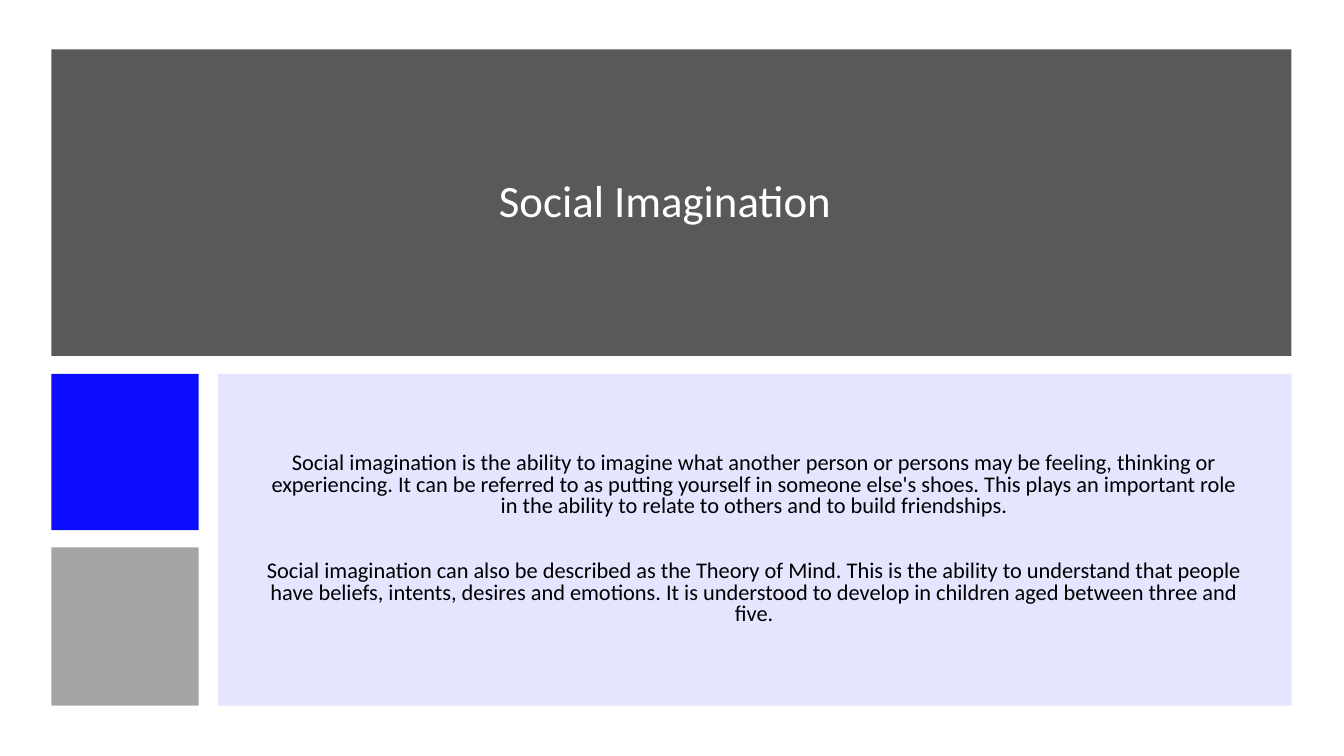
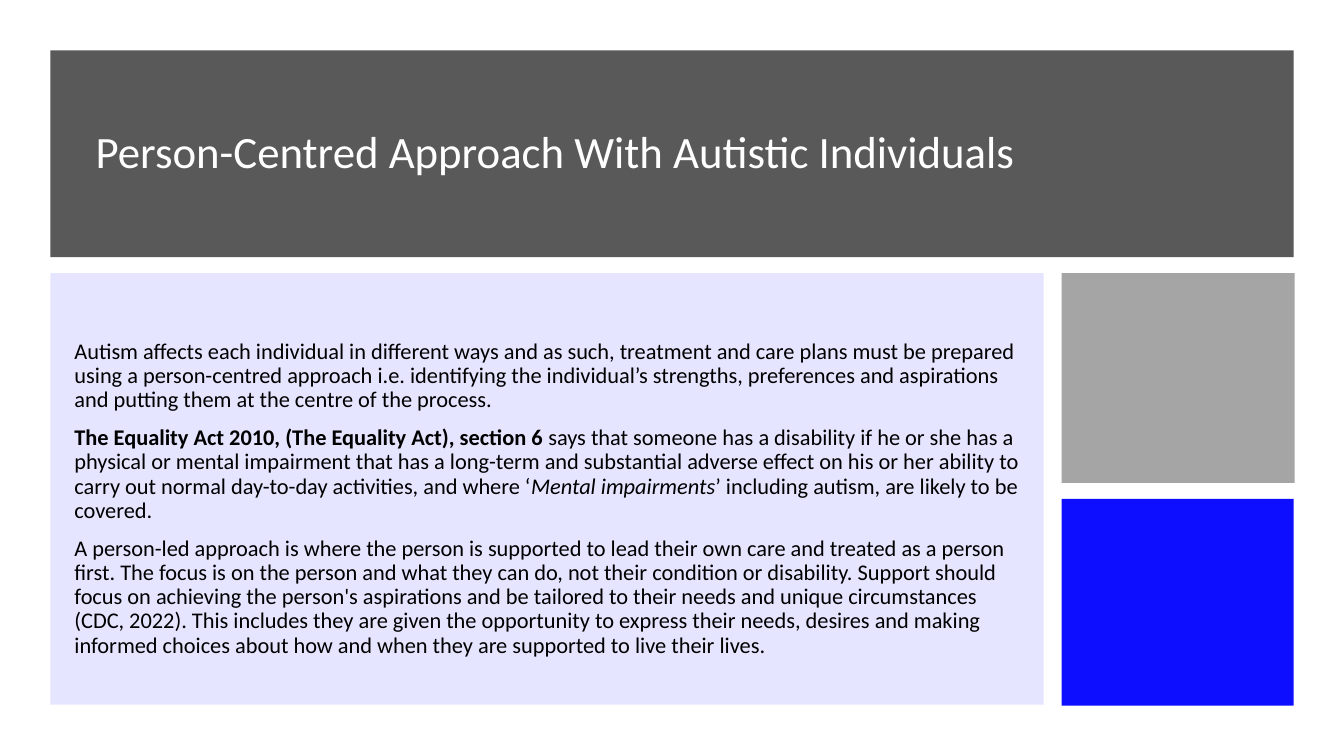
from dataclasses import dataclass

from lxml.etree import SubElement
from pptx import Presentation
from pptx.dml.color import RGBColor
from pptx.enum.shapes import MSO_SHAPE as Shape
from pptx.enum.text import MSO_ANCHOR as Anchor, PP_ALIGN as Align
from pptx.oxml.ns import qn
from pptx.util import Inches, Pt


@dataclass(frozen=True)
class Theme:
    font: str = "Calibri"
    title_size: int = 32
    body_size: int = 16
    title_text: str = "FFFFFF"
    body_text: str = "000000"
    # Fills are (colour, opacity in percent)
    band: tuple = ("595959", 100)
    panel: tuple = ("8080FF", 20)
    accent: tuple = ("0000FF", 95)
    neutral: tuple = ("A5A5A5", 100)


class Deck:
    def __init__(self, theme):
        self.theme = theme
        self.presentation = Presentation()
        self.presentation.slide_width = Inches(13.33)
        self.presentation.slide_height = Inches(7.5)
        self.slide = None

    def new_slide(self):
        blank = self.presentation.slide_layouts[6]
        self.slide = self.presentation.slides.add_slide(blank)

    def block(self, left, top, width, height, fill):
        color, opacity = fill
        block = self.slide.shapes.add_shape(
            Shape.RECTANGLE, Inches(left), Inches(top), Inches(width), Inches(height))
        block.shadow.inherit = False
        block.line.fill.background()
        block.fill.solid()
        block.fill.fore_color.rgb = RGBColor.from_string(color)
        if opacity < 100:
            color_node = block.fill._xPr.find(qn("a:solidFill"))[0]
            SubElement(color_node, qn("a:alpha"), val=str(opacity * 1000))

    def text(self, paragraphs, left, top, width, height, *, size, color,
             align=Align.LEFT, line_spacing=0.9, gaps=None):
        """Each paragraph is a list of (text, style) runs; gaps are points before each."""
        box = self.slide.shapes.add_textbox(
            Inches(left), Inches(top), Inches(width), Inches(height))
        frame = box.text_frame
        frame.word_wrap = True
        frame.vertical_anchor = Anchor.MIDDLE
        for index, runs in enumerate(paragraphs):
            paragraph = frame.add_paragraph() if index else frame.paragraphs[0]
            paragraph.alignment = align
            paragraph.line_spacing = line_spacing
            paragraph.space_before = Pt(gaps[index] if gaps else 0)
            for words, style in runs:
                run = paragraph.add_run()
                run.text = words
                run.font.name = self.theme.font
                run.font.size = Pt(size)
                run.font.color.rgb = RGBColor.from_string(color)
                run.font.bold = style == "bold"
                run.font.italic = style == "italic"

    def title(self, words, *place):
        self.text([[(words, "")]], *place,
                  size=self.theme.title_size, color=self.theme.title_text)

    def body(self, paragraphs, *place, **layout):
        self.text(paragraphs, *place, size=self.theme.body_size,
                  color=self.theme.body_text, **layout)


def social_imagination(deck):
    theme = deck.theme
    deck.new_slide()
    deck.block(0.51, 0.49, 12.3, 3.04, theme.band)
    deck.title("Social Imagination", 4.85, 1.59, 3.61, 0.85)
    deck.block(0.51, 3.71, 1.46, 1.55, theme.accent)
    deck.block(0.51, 5.43, 1.46, 1.57, theme.neutral)
    deck.block(2.16, 3.71, 10.65, 3.29, theme.panel)
    deck.body([
        [("Social imagination is the ability to imagine what another person or persons "
          "may be feeling, thinking or experiencing. It can be referred to as putting "
          "yourself in someone else's shoes. This plays an important role in the ability "
          "to relate to others and to build friendships.", "")],
        [("Social imagination can also be described as the Theory of Mind. This is the "
          "ability to understand that people have beliefs, intents, desires and emotions. "
          "It is understood to develop in children aged between three and five.", "")],
    ], 2.5, 4.44, 9.96, 1.83, align=Align.CENTER, line_spacing=0.8, gaps=(0, 31))


def person_centred_approach(deck):
    theme = deck.theme
    deck.new_slide()
    deck.block(0.5, 0.5, 12.33, 2.05, theme.band)
    deck.title("Person-Centred Approach With Autistic Individuals", 0.85, 1.12, 11.09, 0.81)
    deck.block(0.5, 2.71, 9.85, 4.28, theme.panel)
    deck.block(10.53, 2.71, 2.31, 2.08, theme.neutral)
    deck.block(10.53, 4.95, 2.3, 2.05, theme.accent)
    deck.body([
        [("Autism affects each individual in different ways and as such, treatment and "
          "care plans must be prepared using a person-centred approach i.e. identifying "
          "the individual’s strengths, preferences and aspirations and putting them at "
          "the centre of the process.", "")],
        [("The Equality Act 2010, (The Equality Act), section 6 ", "bold"),
         ("says that someone has a disability if he or she has a physical or mental "
          "impairment that has a long-term and substantial adverse effect on his or her "
          "ability to carry out normal day-to-day activities, and where ‘", ""),
         ("Mental impairments", "italic"),
         ("’ including autism, are likely to be covered.", "")],
        [("A person-led approach is where the person is supported to lead their own care "
          "and treated as a person first. The focus is on the person and what they can "
          "do, not their condition or disability. Support should focus on achieving the "
          "person's aspirations and be tailored to their needs and unique circumstances "
          "(CDC, 2022). This includes they are given the opportunity to express their "
          "needs, desires and making informed choices about how and when they are "
          "supported to live their lives.", "")],
    ], 0.64, 2.9, 9.57, 4.1, gaps=(10, 10, 10))


def main():
    deck = Deck(Theme())
    social_imagination(deck)
    person_centred_approach(deck)
    deck.presentation.save("out.pptx")


if __name__ == "__main__":
    main()
